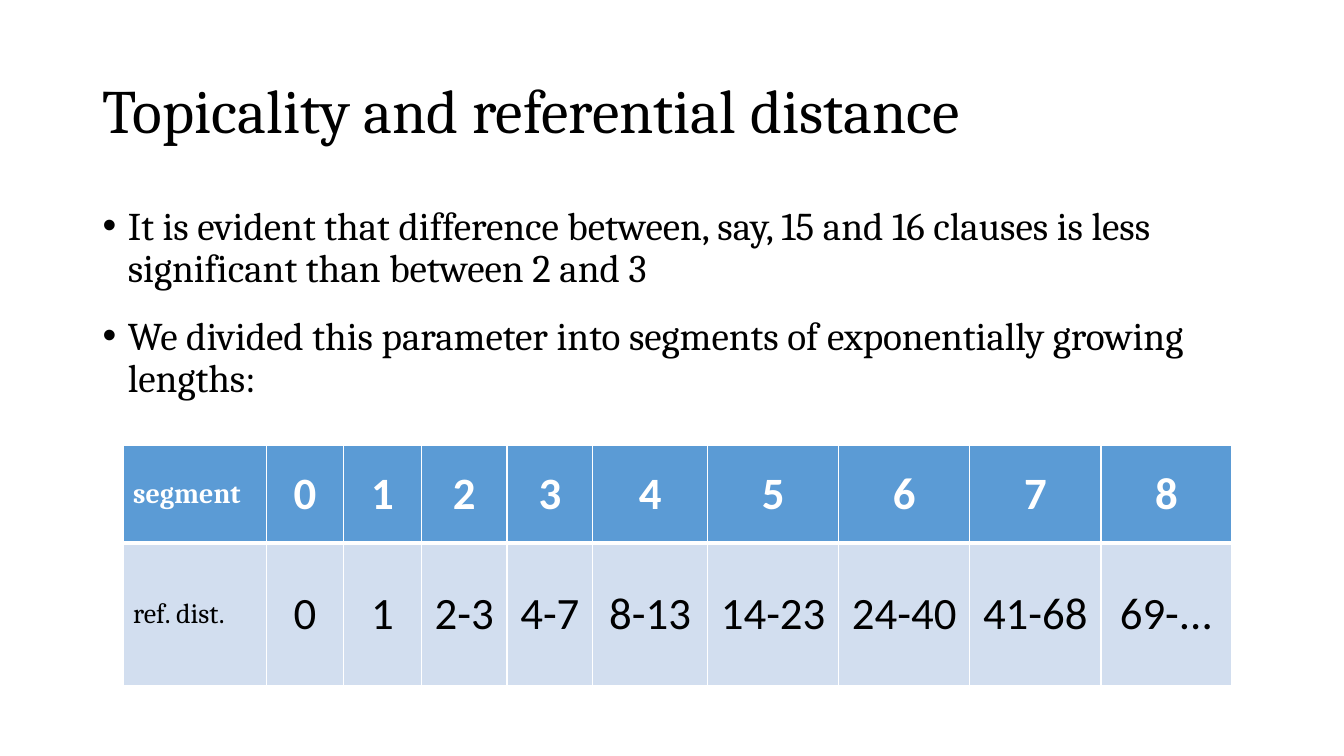
from dataclasses import dataclass

from lxml import etree
from pptx import Presentation
from pptx.dml.color import RGBColor
from pptx.enum import text
from pptx.oxml import ns
from pptx.util import Inches, Pt

# Content
TITLE = "Topicality and referential distance"
BULLETS = [
    "It is evident that difference between, say, 15 and 16 clauses is less significant than between 2 and 3",
    "We divided this parameter into segments of exponentially growing lengths:",
]
SEGMENTS = [
    ["segment", "0", "1", "2", "3", "4", "5", "6", "7", "8"],
    ["ref. dist.", "0", "1", "2-3", "4-7", "8-13", "14-23", "24-40", "41-68", "69-..."],
]
COLUMN_WIDTHS = [1.42, 0.77, 0.77, 0.85, 0.85, 1.14, 1.3, 1.3, 1.3, 1.3]
ROW_HEIGHTS = [0.97, 1.41]


@dataclass(frozen=True)
class Theme:
    black: str = "000000"
    white: str = "FFFFFF"
    header: str = "5B9BD5"
    band: str = "D2DEEF"
    serif: str = "Cambria"
    sans: str = "Calibri"
    title_size: int = 44
    body_size: int = 28
    value_size: int = 32
    label_size: int = 20
    thin: int = 1
    thick: int = 3


THEME = Theme()


def style(paragraph, name, size, color, bold=False):
    font = paragraph.font
    font.name, font.size, font.bold = name, Pt(size), bold
    font.color.rgb = RGBColor.from_string(color)


def add_bullet(paragraph):
    properties = paragraph._p.get_or_add_pPr()
    properties.set("marL", str(Inches(0.25)))
    properties.set("indent", str(-Inches(0.25)))
    etree.SubElement(properties, ns.qn("a:buFont")).set("typeface", "Arial")
    etree.SubElement(properties, ns.qn("a:buChar")).set("char", "•")


def set_borders(cell, top, bottom):
    properties = cell._tc.get_or_add_tcPr()
    sides = {"lnL": THEME.thin, "lnR": THEME.thin, "lnT": top, "lnB": bottom}
    for position, (side, width) in enumerate(sides.items()):
        line = etree.Element(ns.qn(f"a:{side}"), w=str(Pt(width)))
        fill = etree.SubElement(line, ns.qn("a:solidFill"))
        etree.SubElement(fill, ns.qn("a:srgbClr")).set("val", THEME.white)
        properties.insert(position, line)


def add_title(slide):
    title = slide.shapes.title
    title.left, title.top = Inches(0.92), Inches(0.4)
    title.width, title.height = Inches(11.5), Inches(1.45)
    title.text_frame.text = TITLE
    title.text_frame.vertical_anchor = text.MSO_ANCHOR.MIDDLE
    paragraph = title.text_frame.paragraphs[0]
    paragraph.alignment = text.PP_ALIGN.LEFT
    paragraph.line_spacing = 0.9
    style(paragraph, THEME.serif, THEME.title_size, THEME.black)


def add_bullets(slide):
    box = slide.shapes.add_textbox(Inches(0.92), Inches(2), Inches(11.5), Inches(4.76))
    frame = box.text_frame
    frame.word_wrap = True
    frame.text = "\n".join(BULLETS)
    for paragraph in frame.paragraphs:
        paragraph.line_spacing = 0.9
        paragraph.space_before = Pt(18)
        style(paragraph, THEME.serif, THEME.body_size, THEME.black)
        add_bullet(paragraph)


def add_segment_table(slide):
    table = slide.shapes.add_table(
        len(ROW_HEIGHTS), len(COLUMN_WIDTHS), Inches(1.22), Inches(4.42),
        Inches(sum(COLUMN_WIDTHS)), Inches(sum(ROW_HEIGHTS))).table
    for column, width in zip(table.columns, COLUMN_WIDTHS):
        column.width = Inches(width)
    for row, height in zip(table.rows, ROW_HEIGHTS):
        row.height = Inches(height)

    for row_index, values in enumerate(SEGMENTS):
        is_header = row_index == 0
        for column_index, value in enumerate(values):
            is_label = column_index == 0
            cell = table.cell(row_index, column_index)
            cell.text = value
            cell.vertical_anchor = text.MSO_ANCHOR.MIDDLE
            cell.fill.solid()
            cell.fill.fore_color.rgb = RGBColor.from_string(THEME.header if is_header else THEME.band)
            paragraph = cell.text_frame.paragraphs[0]
            paragraph.alignment = text.PP_ALIGN.LEFT if is_label else text.PP_ALIGN.CENTER
            style(paragraph,
                  THEME.serif if is_label else THEME.sans,
                  THEME.label_size if is_label else THEME.value_size,
                  THEME.white if is_header else THEME.black,
                  bold=is_header)
            # The rule between the two rows is thick
            set_borders(cell,
                        top=THEME.thin if is_header else THEME.thick,
                        bottom=THEME.thick if is_header else THEME.thin)


def main():
    presentation = Presentation()
    presentation.slide_width, presentation.slide_height = Inches(13.33), Inches(7.5)
    slide = presentation.slides.add_slide(presentation.slide_layouts.get_by_name("Title Only"))
    add_title(slide)
    add_bullets(slide)
    add_segment_table(slide)
    presentation.save("out.pptx")


if __name__ == "__main__":
    main()
